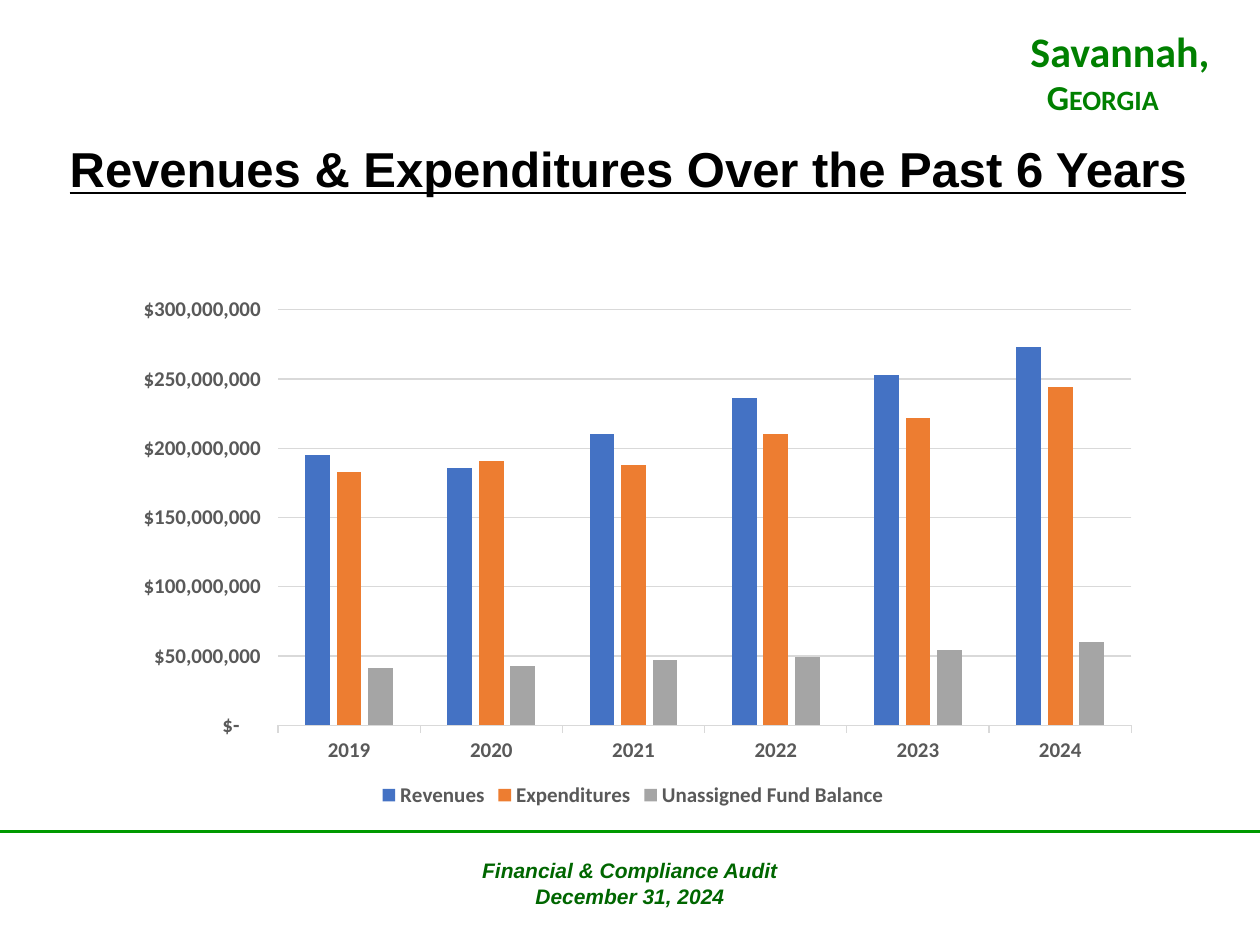
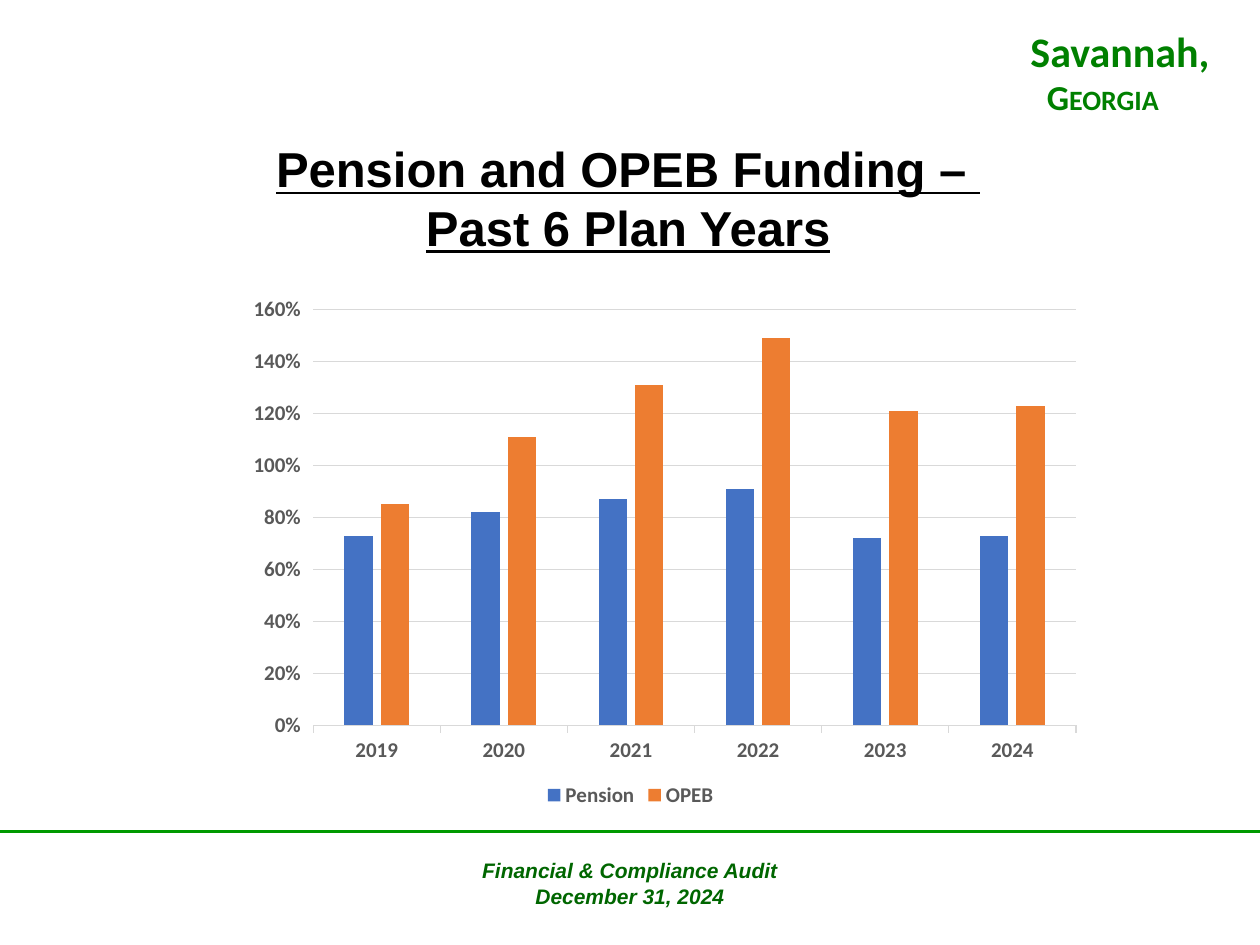
from lxml import etree
from pptx import Presentation
from pptx import util as u
from pptx.chart.data import CategoryChartData
from pptx.dml.color import RGBColor
from pptx.enum import chart as ch, shapes, text
from pptx.oxml import parse_xml
from pptx.oxml.ns import nsdecls, qn

COLORS = {
    "rule": "009900", "city": "008000", "footer": "006600", "title": "000000",
    "labels": "595959", "grid": "D9D9D9",
    "Revenues": "4472C4", "Expenditures": "ED7D31", "Unassigned Fund Balance": "A5A5A5",
    "Pension": "4472C4", "OPEB": "ED7D31",
}
YEARS = ["2019", "2020", "2021", "2022", "2023", "2024"]
DOLLARS = r'_("$"* #,##0_);_("$"* \(#,##0\);_("$"* "-"??_);_(@_)'
PLOT_AREA = {"x": 0.16, "y": 0.147, "w": 0.817, "h": 0.705}
MILLION = 1_000_000

PAGES = [
    {
        "title": ["Revenues & Expenditures Over the Past 6 Years"],
        "title_height": 0.57, "left": 0.88, "width": 8.29,
        "format": DOLLARS, "top_value": 300 * MILLION, "step": 50 * MILLION, "scale": MILLION,
        "series": {
            "Revenues": [195, 186, 210, 236, 253, 273],
            "Expenditures": [183, 191, 188, 210, 222, 244],
            "Unassigned Fund Balance": [41, 43, 47, 49, 54, 60],
        },
    },
    {
        "title": ["Pension and OPEB Funding – ", "Past 6 Plan Years"],
        "title_height": 1.04, "left": 1.3, "width": 7.41,
        "format": "0%", "top_value": 1.6, "step": 0.2, "scale": 1,
        "series": {
            "Pension": [0.73, 0.82, 0.87, 0.91, 0.72, 0.73],
            "OPEB": [0.85, 1.11, 1.31, 1.49, 1.21, 1.23],
        },
    },
]


def style(font, name, size, color, italic=None, underline=None):
    font.name, font.size, font.bold = name, u.Pt(size), True
    font.italic, font.underline = italic, underline
    font.color.rgb = RGBColor.from_string(COLORS[color])


def write_lines(frame, lines, align, *look, **emphasis):
    frame.text = "\n".join(lines)
    for paragraph in frame.paragraphs:
        paragraph.alignment = align
        style(paragraph.font, *look, **emphasis)


prs = Presentation()
prs.slide_width, prs.slide_height = u.Inches(10), u.Inches(7.5)
CENTER, LEFT = text.PP_ALIGN.CENTER, text.PP_ALIGN.LEFT

for page in PAGES:
    slide = prs.slides.add_slide(prs.slide_layouts[5])

    rule = slide.shapes.add_connector(
        shapes.MSO_CONNECTOR.STRAIGHT,
        u.Inches(-0.01), u.Inches(6.6), u.Inches(10.01), u.Inches(6.6))
    rule.line.color.rgb = RGBColor.from_string(COLORS["rule"])
    rule.line.width = u.Pt(2)
    etree.SubElement(rule._element.spPr, qn("a:effectLst"))

    place = slide.shapes.add_textbox(
        u.Inches(8.08), u.Inches(0.15), u.Inches(1.88), u.Inches(0.84)).text_frame
    place.word_wrap = False
    write_lines(place, ["Savannah,", "Georgia"], LEFT, "Calibri", 24, "city")
    state = place.paragraphs[1]
    state.font.size = u.Pt(20)
    state._p.get_or_add_pPr().set("marL", str(u.Inches(0.13)))
    state.runs[0].font._element.set("cap", "small")

    footer = slide.shapes.add_textbox(
        u.Inches(0), u.Inches(6.76), u.Inches(10), u.Inches(0.5)).text_frame
    footer.word_wrap = True
    write_lines(footer, ["Financial & Compliance Audit", "December 31, 2024"],
                CENTER, "Arial", 12, "footer", italic=True)

    title = slide.shapes.title
    title.left, title.top = u.Inches(0.07), u.Inches(1.05)
    title.width, title.height = u.Inches(9.83), u.Inches(page["title_height"])
    heading = title.text_frame
    heading.vertical_anchor = text.MSO_ANCHOR.TOP
    heading.auto_size = text.MSO_AUTO_SIZE.NONE
    heading.word_wrap = True
    write_lines(heading, page["title"], CENTER, "Arial", 28, "title", underline=True)

    figures = CategoryChartData(number_format=page["format"])
    figures.categories = YEARS
    for name, values in page["series"].items():
        figures.add_series(name, [value * page["scale"] for value in values])
    chart = slide.shapes.add_chart(
        ch.XL_CHART_TYPE.COLUMN_CLUSTERED, u.Inches(page["left"]), u.Inches(1.77),
        u.Inches(page["width"]), u.Inches(4.68), figures).chart
    chart.has_title = False
    chart.font.name, chart.font.size = "Calibri", u.Pt(10)
    chart.has_legend = True
    chart.legend.position = ch.XL_LEGEND_POSITION.BOTTOM
    chart.legend.include_in_layout = False
    style(chart.legend.font, "Calibri", 12, "labels")

    columns = chart.plots[0]
    columns.gap_width, columns.overlap, columns.vary_by_categories = 219, -27, False
    for series in columns.series:
        series.format.fill.solid()
        series.format.fill.fore_color.rgb = RGBColor.from_string(COLORS[series.name])

    years, amounts = chart.category_axis, chart.value_axis
    for axis in (years, amounts):
        style(axis.tick_labels.font, "Calibri", 12, "labels")
        axis.major_tick_mark = ch.XL_TICK_MARK.OUTSIDE
    amounts.minimum_scale, amounts.maximum_scale = 0, page["top_value"]
    amounts.major_unit = page["step"]
    amounts.tick_labels.number_format = page["format"]
    amounts.tick_labels.number_format_is_linked = False
    amounts.format.line.fill.background()
    for line in (years.format.line, amounts.major_gridlines.format.line):
        line.color.rgb = RGBColor.from_string(COLORS["grid"])
        line.width = u.Pt(0.75)

    plot_area = chart._chartSpace.chart.plotArea
    for automatic in plot_area.findall(qn("c:layout")):
        plot_area.remove(automatic)
    sides = "".join(f'<c:{side} val="{share}"/>' for side, share in PLOT_AREA.items())
    plot_area.insert(0, parse_xml(
        f'<c:layout {nsdecls("c")}><c:manualLayout><c:layoutTarget val="inner"/>'
        f'<c:xMode val="edge"/><c:yMode val="edge"/>{sides}</c:manualLayout></c:layout>'))

prs.save("out.pptx")
